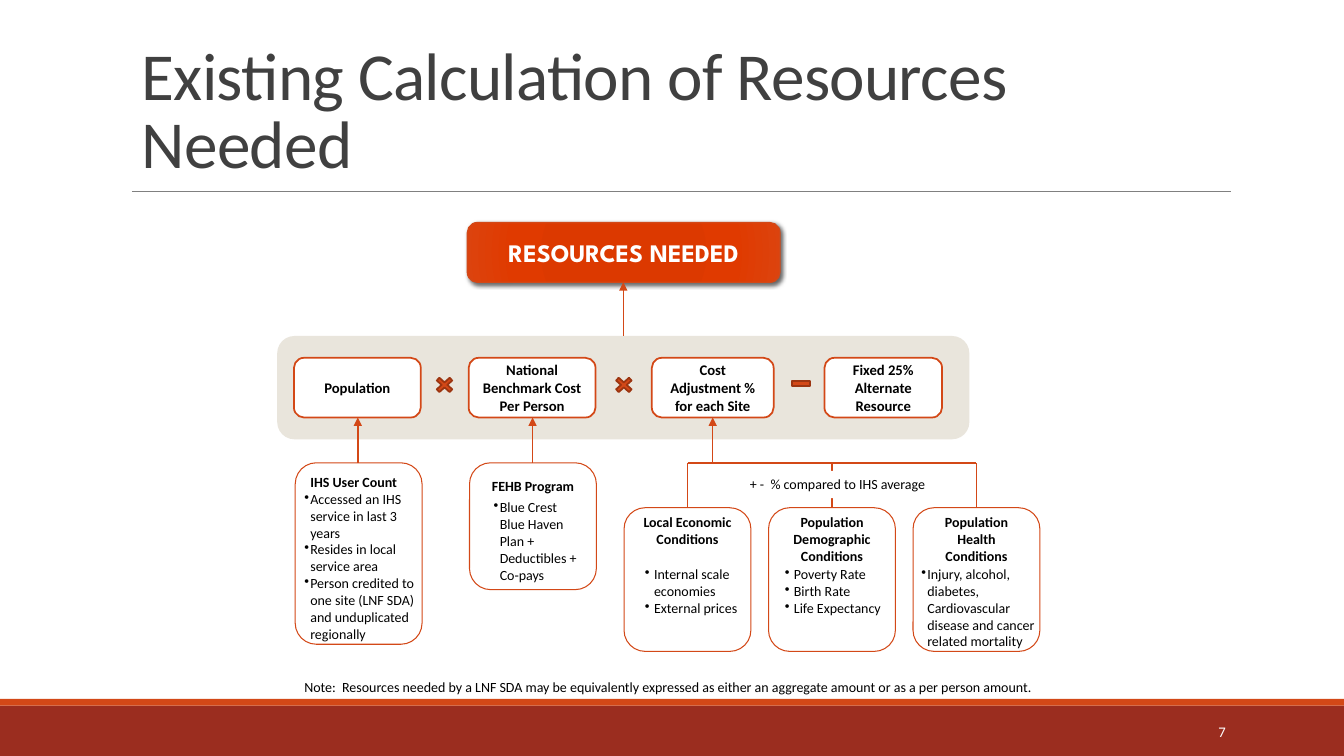
from dataclasses import dataclass

from lxml import etree
from pptx import Presentation
from pptx import util as u
from pptx.dml.color import RGBColor
from pptx.enum import shapes, text
from pptx.oxml import parse_xml
from pptx.oxml.ns import nsdecls, qn

SHAPE = shapes.MSO_SHAPE
ALIGN = text.PP_ALIGN
ANCHOR = text.MSO_ANCHOR
COLS, ROWS = 160, 90
SLIDE_W, SLIDE_H = u.Inches(13.333), u.Inches(7.5)


@dataclass(frozen=True)
class Theme:
    """Colours, fonts and type sizes of the slide."""
    accent: str = "D34817"
    accent_dark: str = "9C3511"
    footer: str = "9B2D1F"
    panel: str = "E9E5DC"
    white: str = "FFFFFF"
    black: str = "000000"
    title: str = "404040"
    rule: str = "808080"
    glow: tuple = ((0, "DA3900"), (34, "DC3900"), (70, "E03A00"), (100, "DC430E"))
    body_font: str = "Calibri"
    display_font: str = "League Spartan"
    title_size: float = 48
    result_size: float = 18
    factor_size: float = 10.5
    detail_size: float = 10


T = Theme()


def col(n):
    """Convert grid columns to a length."""
    return u.Emu(round(SLIDE_W * n / COLS))


def row(n):
    """Convert grid rows to a length."""
    return u.Emu(round(SLIDE_H * n / ROWS))


def place(x, y, w, h):
    """Convert a grid box to left, top, width and height."""
    return col(x), row(y), col(w), row(h)


def write(sp, content, size=T.detail_size, color=T.black, font=T.body_font, bold=False,
          align=ALIGN.LEFT, anchor=ANCHOR.TOP, top=0.05, indent=0, bullet=False,
          leading=None, tracking=None):
    """Append one formatted paragraph to a shape."""
    tf = sp.text_frame
    tf.word_wrap = True
    tf.vertical_anchor = anchor
    tf.margin_top = u.Inches(top)
    p = tf.paragraphs[0] if not tf.text else tf.add_paragraph()
    p.alignment = align
    if leading:
        p.line_spacing = leading
    pPr = p._p.get_or_add_pPr()
    if indent:
        pPr.set("marL", str(u.Inches(indent)))
    if bullet:
        pPr.set("indent", str(-u.Inches(indent)))
        etree.SubElement(pPr, qn("a:buChar")).set("char", "•")
    r = p.add_run()
    r.text = content
    r.font.name, r.font.size, r.font.bold = font, u.Pt(size), bold
    r.font.color.rgb = RGBColor.from_string(color)
    if tracking:
        r.font._element.set("spc", str(round(tracking * 100)))


def add_text(slide, box, content="", **fmt):
    """Add a text box, with a first paragraph if given."""
    sp = slide.shapes.add_textbox(*place(*box))
    if content:
        write(sp, content, **fmt)
    return sp


def add_bullets(slide, box, items, indent, heading=None):
    """Add a bulleted list under an optional bold heading."""
    sp = add_text(slide, box)
    if heading:
        write(sp, heading, bold=True, indent=indent)
    for item in items:
        write(sp, item, indent=indent, bullet=True)


def add_block(slide, kind, box, fill, line=None, weight=0.75):
    """Add a flat preset shape."""
    sp = slide.shapes.add_shape(kind, *place(*box))
    sp.shadow.inherit = False
    sp.fill.solid()
    sp.fill.fore_color.rgb = RGBColor.from_string(fill)
    if line:
        sp.line.color.rgb = RGBColor.from_string(line)
        sp.line.width = u.Pt(weight)
    else:
        sp.line.fill.background()
    return sp


def add_card(slide, box, heading="", weight=0.75, **fmt):
    """Add a white rounded card with a bold centred heading."""
    sp = add_block(slide, SHAPE.ROUNDED_RECTANGLE, box, T.white, T.accent, weight)
    if heading:
        write(sp, heading, bold=True, align=ALIGN.CENTER, **fmt)


def add_line(slide, start, end, color=T.accent, weight=1, arrow=False):
    """Add a straight line between two grid points."""
    sp = slide.shapes.add_connector(shapes.MSO_CONNECTOR.STRAIGHT, col(start[0]),
                                    row(start[1]), col(end[0]), row(end[1]))
    sp.line.color.rgb = RGBColor.from_string(color)
    sp.line.width = u.Pt(weight)
    if arrow:
        etree.SubElement(sp.line._get_or_add_ln(), qn("a:tailEnd")).set("type", "triangle")
    etree.SubElement(sp._element.spPr, qn("a:effectLst"))


def add_result(slide, box, content):
    """Add the glowing result banner with its drop shadow."""
    sp = add_block(slide, SHAPE.ROUNDED_RECTANGLE, box, T.accent, T.accent, 1)
    spPr = sp._element.spPr
    stops = "".join(f'<a:gs pos="{pos * 1000}"><a:srgbClr val="{c}"/></a:gs>'
                    for pos, c in T.glow)
    spPr.replace(spPr.find(qn("a:solidFill")), parse_xml(
        f'<a:gradFill {nsdecls("a")} rotWithShape="1"><a:gsLst>{stops}</a:gsLst>'
        '<a:path path="circle"><a:fillToRect l="100000" t="100000" r="100000" b="100000"/>'
        '</a:path></a:gradFill>'))
    spPr.find(qn("a:effectLst")).append(parse_xml(
        f'<a:outerShdw {nsdecls("a")} blurRad="{u.Pt(3)}" dist="{u.Pt(2)}" dir="2700000">'
        f'<a:srgbClr val="{T.black}"><a:alpha val="60000"/></a:srgbClr></a:outerShdw>'))
    write(sp, content, size=T.result_size, color=T.white, font=T.display_font, bold=True,
          align=ALIGN.CENTER, anchor=ANCHOR.MIDDLE)


def add_frame(slide):
    """Add the title, its rule, the footer bands and the page number."""
    add_block(slide, SHAPE.RECTANGLE, (0, 84, COLS, 6), T.footer)
    add_block(slide, SHAPE.RECTANGLE, (0, 83.2, COLS, 0.8), T.accent)
    add_line(slide, (15.7, 22.8), (146.5, 22.8), T.rule, 0.5)
    add_text(slide, (15.7, 10.4, 131.4, 11.9), "Existing Calculation of Resources Needed",
             size=T.title_size, color=T.title, anchor=ANCHOR.BOTTOM, leading=0.85,
             tracking=-0.5)
    add_text(slide, (130, 84.7, 17.1, 4.8), "7", size=T.factor_size, color=T.white,
             align=ALIGN.RIGHT, anchor=ANCHOR.MIDDLE)


def add_formula(slide):
    """Add the result, the factors and the operators between them."""
    add_result(slide, (55.65, 26.5, 37.2, 7.1), "RESOURCES NEEDED")
    add_block(slide, SHAPE.ROUNDED_RECTANGLE, (33, 40, 82.4, 12.3), T.panel)
    for x, w, name in ((35, 15.1, "Population"),
                       (55.8, 15.1, "National Benchmark Cost Per Person"),
                       (77.6, 14.5, "Cost Adjustment % for each Site"),
                       (98.15, 14, "Fixed 25% Alternate Resource")):
        add_card(slide, (x, 42.6, w, 7.1), name, 1.25, size=T.factor_size,
                 anchor=ANCHOR.MIDDLE)
    for kind, x, h in ((SHAPE.MATH_MULTIPLY, 51.45, 2.65), (SHAPE.MATH_MULTIPLY, 72.8, 2.65),
                       (SHAPE.MATH_MINUS, 93.9, 2.3)):
        sign = add_block(slide, kind, (x, 44.5, 2.95, h), T.accent, T.accent_dark, 1.25)
        if kind == SHAPE.MATH_MULTIPLY:
            sign.adjustments[0] = 0.17
    add_line(slide, (74.2, 40), (74.2, 33.6), weight=0.75, arrow=True)


def add_sources(slide):
    """Add the detail cards and the arrows up to their factors."""
    bus, factor_foot, card_top = 55.1, 49.7, 60.45
    add_card(slide, (35.15, bus, 15.1, 21.6))
    add_bullets(slide, (35.05, 55.8, 16.1, 21.2), (
        "Accessed an IHS service in last 3 years", "Resides in local service area",
        "Person credited to one site (LNF SDA) and unduplicated regionally"),
        0.06, "IHS User Count")
    add_card(slide, (55.9, bus, 15.1, 15.1), "FEHB Program", top=0.08)
    add_bullets(slide, (57.6, 58.8, 12.7, 11.3),
                ("Blue Crest Blue Haven Plan + Deductibles + Co-pays",), 0.06)
    conditions = (
        ("Local Economic Conditions", 1.3, 16.2, 0.09,
         ("Internal scale economies", "External prices")),
        ("Population Demographic Conditions", 0.75, 16.2, 0.09,
         ("Poverty Rate", "Birth Rate", "Life Expectancy")),
        ("Population Health Conditions", -0.2, 17.6, 0.06,
         ("Injury, alcohol, diabetes, Cardiovascular disease and cancer related mortality",)))
    lefts = [74.3 + 17.2 * i for i in range(len(conditions))]
    for x, (name, shift, w, indent, items) in zip(lefts, conditions):
        add_card(slide, (x, card_top, 15.1, 17.1), name, top=0)
        add_bullets(slide, (x + shift, 66.75, w, 11.3), items, indent)
        add_line(slide, (x + 7.55, card_top), (x + 7.55, bus))
    add_line(slide, (lefts[0] + 7.55, bus), (lefts[-1] + 7.55, bus))
    for x in (42.6, 63.4, 84.85):
        add_line(slide, (x, bus), (x, factor_foot), arrow=True)
    label = add_block(slide, SHAPE.RECTANGLE, (88.1, 56.05, 25.2, 3.25), T.white)
    write(label, "+ -  % compared to IHS average")
    add_text(slide, (35.05, 80.2, 91.1, 3.2), "Note:  Resources needed by a LNF SDA may be "
             "equivalently expressed as either an aggregate amount or as a per person amount.")


def main():
    """Build and save the slide."""
    prs = Presentation()
    prs.slide_width, prs.slide_height = SLIDE_W, SLIDE_H
    slide = prs.slides.add_slide(prs.slide_layouts[6])
    add_frame(slide)
    add_formula(slide)
    add_sources(slide)
    prs.save("out.pptx")


if __name__ == "__main__":
    main()
